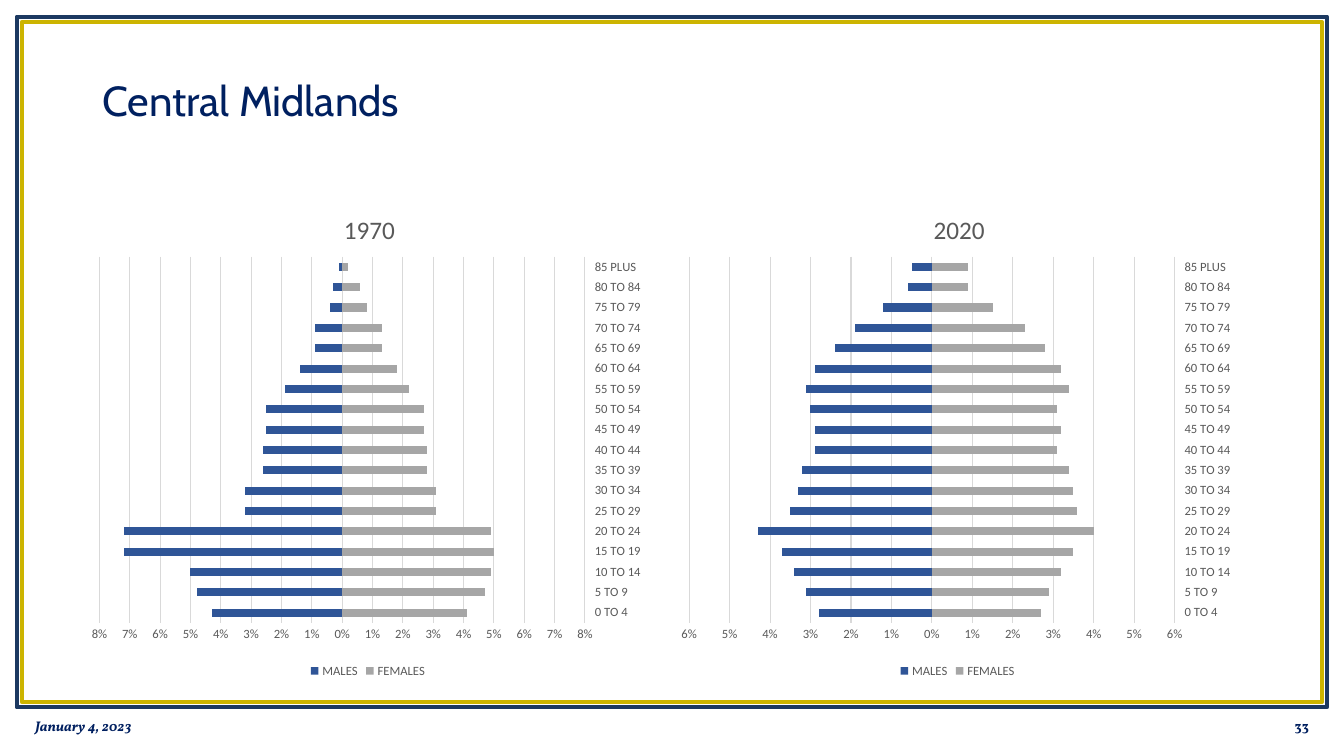
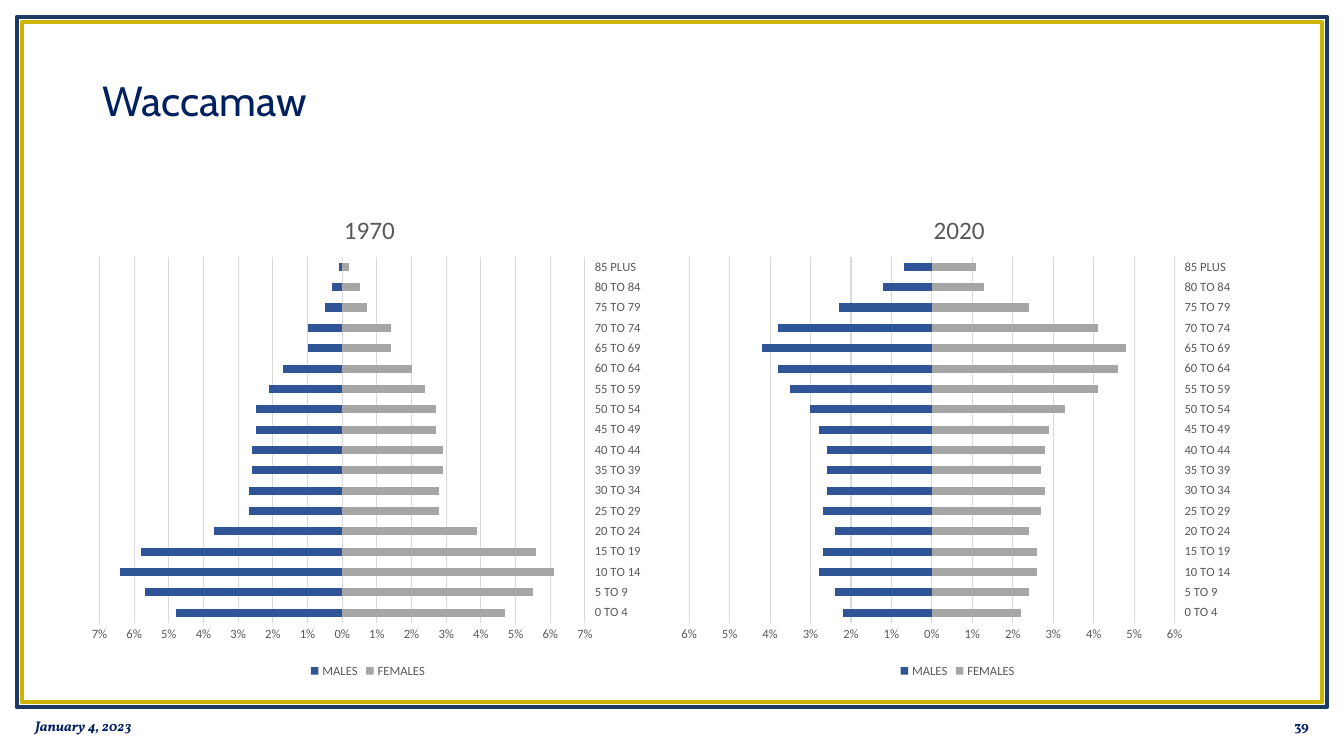
import pptx
import pptx.util
import pptx.chart.data
import pptx.dml.color
import pptx.enum.chart
import pptx.enum.shapes
import pptx.enum.text
import pptx.oxml
import pptx.oxml.ns

RGBColor = pptx.dml.color.RGBColor
Pt = pptx.util.Pt
ALIGN = pptx.enum.text.PP_ALIGN
KIND = pptx.enum.chart

NAVY = RGBColor(0x00, 0x20, 0x60)
FRAME = RGBColor(0x1C, 0x39, 0x61)
GOLD = RGBColor(0xCC, 0xB4, 0x00)
BLUE = RGBColor(0x2F, 0x55, 0x97)
GRAY = RGBColor(0xA6, 0xA6, 0xA6)
TEXT = RGBColor(0x59, 0x59, 0x59)
RULE = RGBColor(0xD9, 0xD9, 0xD9)

deck = pptx.Presentation()
deck.slide_width = pptx.util.Inches(13.33)
deck.slide_height = pptx.util.Inches(7.5)
COLS, ROWS = 80, 45
COL = deck.slide_width / COLS
ROW = deck.slide_height / ROWS

FRAMES = [
    ((1, 1, 78, 41.1), FRAME, 3),
    ((1.3, 1.3, 77.4, 40.5), GOLD, 2.5),
]
SPOTS = [(4.9, 11.16, 34, 29.46), (40, 11.16, 34, 29.46)]
AGES = [f"{age} TO {age + 4}" for age in range(0, 85, 5)] + ["85 PLUS"]

# Each pyramid: year, axis limit in percent, males and females in tenths of a percent.
SLIDES = [
    ("Central Midlands", "33", [
        ("1970", 8,
         [43, 48, 50, 72, 72, 32, 32, 26, 26, 25, 25, 19, 14, 9, 9, 4, 3, 1],
         [41, 47, 49, 50, 49, 31, 31, 28, 28, 27, 27, 22, 18, 13, 13, 8, 6, 2]),
        ("2020", 6,
         [28, 31, 34, 37, 43, 35, 33, 32, 29, 29, 30, 31, 29, 24, 19, 12, 6, 5],
         [27, 29, 32, 35, 40, 36, 35, 34, 31, 32, 31, 34, 32, 28, 23, 15, 9, 9]),
    ]),
    ("Waccamaw", "39", [
        ("1970", 7,
         [48, 57, 64, 58, 37, 27, 27, 26, 26, 25, 25, 21, 17, 10, 10, 5, 3, 1],
         [47, 55, 61, 56, 39, 28, 28, 29, 29, 27, 27, 24, 20, 14, 14, 7, 5, 2]),
        ("2020", 6,
         [22, 24, 28, 27, 24, 27, 26, 26, 26, 28, 30, 35, 38, 42, 38, 23, 12, 7],
         [22, 24, 26, 26, 24, 27, 28, 27, 28, 29, 33, 41, 46, 48, 41, 24, 13, 11]),
    ]),
]


def grid(left, top, width, height):
    return [round(n) for n in (left * COL, top * ROW, width * COL, height * ROW)]


def label(slide, spot, text, face, size, align=ALIGN.LEFT):
    frame = slide.shapes.add_textbox(*grid(*spot)).text_frame
    frame.word_wrap = True
    frame.vertical_anchor = pptx.enum.text.MSO_ANCHOR.MIDDLE
    para = frame.paragraphs[0]
    para.text = text
    para.alignment = align
    para.font.name = face
    para.font.size = Pt(size)
    para.font.color.rgb = NAVY
    return para


for name, page, charts in SLIDES:
    slide = deck.slides.add_slide(deck.slide_layouts[6])
    for spot, color, width in FRAMES:
        rect = slide.shapes.add_shape(
            pptx.enum.shapes.MSO_SHAPE.RECTANGLE, *grid(*spot))
        rect.shadow.inherit = False
        rect.fill.background()
        rect.line.color.rgb = color
        rect.line.width = Pt(width)

    label(slide, (5.5, 2.4, 69, 7.4), name, "Cabin", 30).line_spacing = 0.9
    date = label(slide, (1.5, 42, 18, 2.4), "January 4, 2023", "Vollkorn", 10)
    date.font.bold = date.font.italic = True
    label(slide, (60.5, 42, 18, 2.4), page, "Vollkorn", 10,
          ALIGN.RIGHT).font.bold = True

    for spot, (year, limit, males, females) in zip(SPOTS, charts):
        data = pptx.chart.data.CategoryChartData()
        data.categories = AGES
        data.add_series("MALES", [-n / 1000 for n in males])
        data.add_series("FEMALES", [n / 1000 for n in females])
        chart = slide.shapes.add_chart(
            KIND.XL_CHART_TYPE.BAR_STACKED, *grid(*spot), data).chart
        chart.font.name = "Calibri"
        chart.font.size = Pt(9)
        chart.font.color.rgb = TEXT

        chart.has_title = True
        head = chart.chart_title.text_frame.paragraphs[0]
        head.text = year
        head.font.name = "Calibri"
        head.font.size = Pt(18)
        head.font.bold = False
        head.font.color.rgb = TEXT

        chart.has_legend = True
        chart.legend.position = KIND.XL_LEGEND_POSITION.BOTTOM
        chart.legend.include_in_layout = False

        plot = chart.plots[0]
        plot.gap_width = 150
        plot.overlap = 100
        plot.vary_by_categories = False
        for series, color in zip(plot.series, (BLUE, GRAY)):
            series.invert_if_negative = False
            series.format.fill.solid()
            series.format.fill.fore_color.rgb = color

        ages = chart.category_axis
        ages.tick_label_position = KIND.XL_TICK_LABEL_POSITION.HIGH
        ages.format.line.color.rgb = RULE
        ages.format.line.width = Pt(0.75)
        share = chart.value_axis
        share.minimum_scale = -limit / 100
        share.maximum_scale = limit / 100
        share.major_unit = 0.01
        share.tick_labels.number_format = "0%;0%"
        share.tick_labels.number_format_is_linked = False
        share.format.line.fill.background()
        share.major_gridlines.format.line.color.rgb = RULE
        share.major_gridlines.format.line.width = Pt(0.75)
        for axis in (ages, share):
            axis.major_tick_mark = KIND.XL_TICK_MARK.NONE
            axis.minor_tick_mark = KIND.XL_TICK_MARK.NONE

        root = chart.element.find(pptx.oxml.ns.qn("c:chart"))
        for tag, index, rules in (
            ("c:title", 1, {"xMode": "edge", "yMode": "edge",
                            "x": 0.45, "y": 0.04}),
            ("c:plotArea", 0, {"layoutTarget": "inner", "xMode": "edge",
                               "yMode": "edge", "x": 0.03, "y": 0.14,
                               "w": 0.85, "h": 0.74}),
        ):
            part = root.find(pptx.oxml.ns.qn(tag))
            for old in part.findall(pptx.oxml.ns.qn("c:layout")):
                part.remove(old)
            body = "".join(f'<c:{key} val="{val}"/>' for key, val in rules.items())
            part.insert(index, pptx.oxml.parse_xml(
                f'<c:layout {pptx.oxml.ns.nsdecls("c")}>'
                f"<c:manualLayout>{body}</c:manualLayout></c:layout>"))

deck.save("out.pptx")
